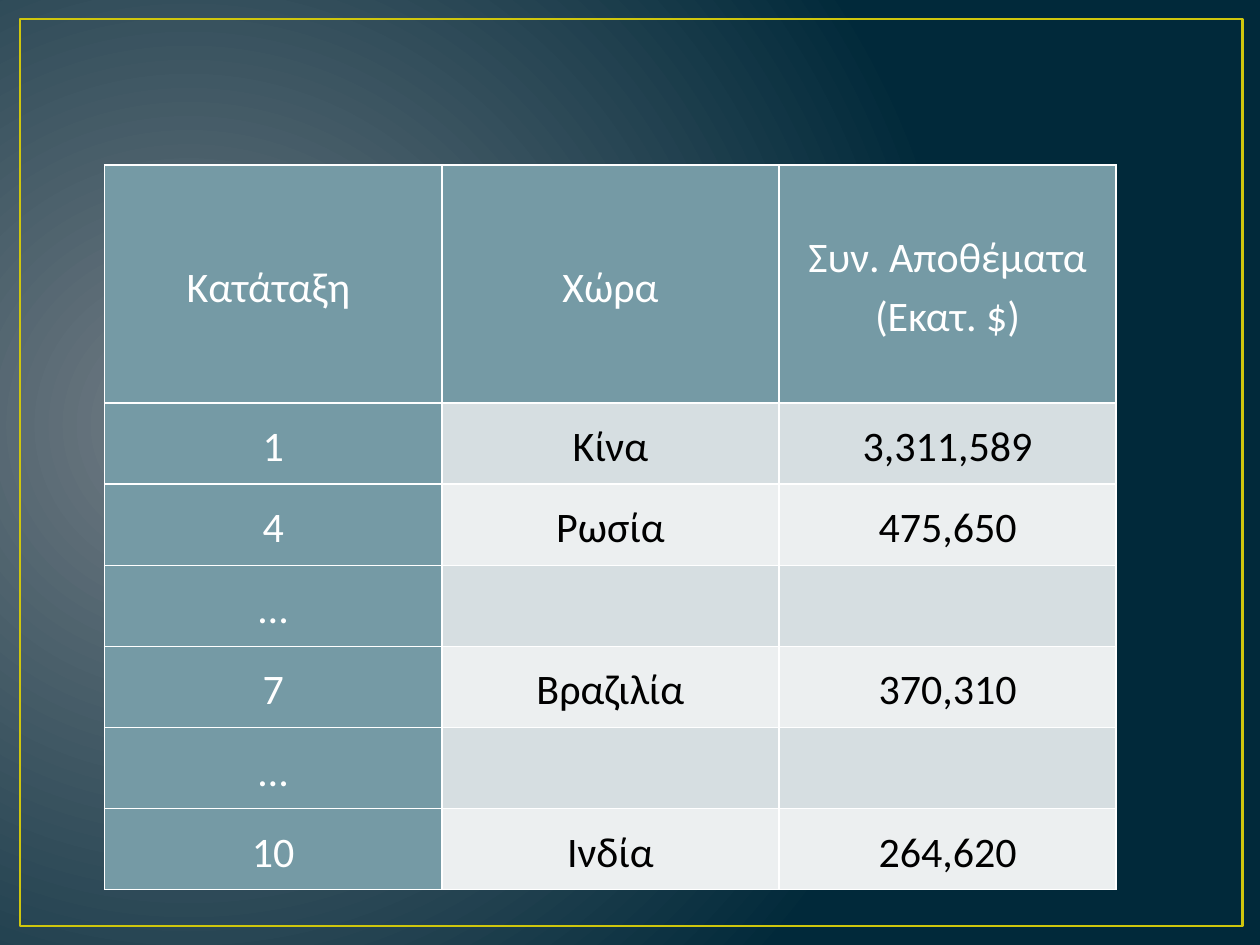
"""Build a slide with a table of countries ranked by total reserves."""
from dataclasses import dataclass
from typing import NamedTuple

from lxml import etree
from pptx import Presentation
from pptx import util as u
from pptx.dml.color import RGBColor
from pptx.enum import shapes, text
from pptx.oxml import ns


@dataclass(frozen=True)
class Theme:
    """Colours, font and sizes of the slide."""
    glow: str = "717C84"
    night: str = "01293A"
    frame: str = "CFC60D"
    accent: str = "759AA5"
    bands: tuple[str, str] = ("D6DEE1", "ECEFF0")
    light: str = "FFFFFF"
    dark: str = "000000"
    font: str = "Calibri"
    size: float = 24
    frame_width: float = 1.5
    border_width: float = 1


class Area(NamedTuple):
    """A rectangle in inches."""
    left: float
    top: float
    width: float
    height: float

    def lengths(self) -> list[int]:
        """Return the four lengths as slide units."""
        return [u.Inches(value) for value in self]


class Rank(NamedTuple):
    """One table row."""
    place: str
    country: str = ""
    reserves: str = ""


THEME = Theme()
WIDTH, HEIGHT = 10, 7.5
FRAME = Area(0.16, 0.15, 9.7, 7.2)
GRID = Area(0.83, 1.31, 8.03, 5.75)
HEADER_HEIGHT = 1.89
CELL_MARGIN = 0.01
RANKS = [
    Rank("Κατάταξη ", "Χώρα", "Συν. Αποθέματα\n(Εκατ. $)"),
    Rank("1", "Κίνα", "3,311,589"),
    Rank("4", "Ρωσία", "475,650"),
    Rank("…"),
    Rank("7", "Βραζιλία", "370,310"),
    Rank("…"),
    Rank("10", "Ινδία", "264,620"),
]


def paint_background(page) -> None:
    """Fill the page with a radial glow from the left."""
    fill = page.background.fill
    fill.gradient()
    for stop, color in zip(fill.gradient_stops, (THEME.glow, THEME.night)):
        stop.color.rgb = RGBColor.from_string(color)
    gradient = page.element.find(".//" + ns.qn("a:gradFill"))
    gradient.remove(gradient.find(ns.qn("a:lin")))
    circle = etree.SubElement(gradient, ns.qn("a:path"), path="circle")
    etree.SubElement(circle, ns.qn("a:fillToRect"),
                     l="15000", t="50000", r="85000", b="60000")


def add_frame(page, area: Area) -> None:
    """Draw the outline around the page."""
    box = page.shapes.add_shape(shapes.MSO_SHAPE.RECTANGLE, *area.lengths())
    box.shadow.inherit = False
    box.fill.background()
    box.line.color.rgb = RGBColor.from_string(THEME.frame)
    box.line.width = u.Pt(THEME.frame_width)


def write(para, words: str, *, color: str, size: float = THEME.size,
          font: str = THEME.font, spacing: float = 1.15) -> None:
    """Write centred words with line breaks into a paragraph."""
    para.alignment = text.PP_ALIGN.CENTER
    para.line_spacing = spacing
    for index, line in enumerate(words.split("\n")):
        if index:
            para.add_line_break()
        span = para.add_run()
        span.text = line
        span.font.name = font
        span.font.size = u.Pt(size)
        span.font.color.rgb = RGBColor.from_string(color)


def set_borders(cell, color: str, width: float) -> None:
    """Draw all four sides of a cell."""
    properties = cell._tc.get_or_add_tcPr()
    for index, side in enumerate(("lnL", "lnR", "lnT", "lnB")):
        line = etree.Element(ns.qn(f"a:{side}"), w=str(u.Pt(width)))
        solid = etree.SubElement(line, ns.qn("a:solidFill"))
        etree.SubElement(solid, ns.qn("a:srgbClr"), val=color)
        properties.insert(index, line)


def style_cell(cell, words: str, *, fill: str, color: str) -> None:
    """Fill, border and write one cell."""
    cell.fill.solid()
    cell.fill.fore_color.rgb = RGBColor.from_string(fill)
    set_borders(cell, THEME.light, THEME.border_width)
    cell.vertical_anchor = text.MSO_ANCHOR.MIDDLE
    cell.margin_left = cell.margin_right = u.Inches(CELL_MARGIN)
    cell.margin_top = cell.margin_bottom = u.Inches(CELL_MARGIN)
    if words:
        write(cell.text_frame.paragraphs[0], words, color=color)


def add_ranking(page, area: Area, ranks: list[Rank]) -> None:
    """Add the table with an accented header row and first column."""
    columns = len(Rank._fields)
    table = page.shapes.add_table(len(ranks), columns, *area.lengths()).table
    table.first_row = table.horz_banding = False
    for column in table.columns:
        column.width = u.Inches(area.width / columns)
    body_height = (area.height - HEADER_HEIGHT) / (len(ranks) - 1)
    for row, rank in enumerate(ranks):
        table.rows[row].height = u.Inches(body_height if row else HEADER_HEIGHT)
        for column, words in enumerate(rank):
            heading = row == 0 or column == 0
            style_cell(table.cell(row, column), words,
                       fill=THEME.accent if heading else THEME.bands[(row - 1) % 2],
                       color=THEME.light if heading else THEME.dark)


def main() -> None:
    """Build and save the deck."""
    deck = Presentation()
    deck.slide_width, deck.slide_height = u.Inches(WIDTH), u.Inches(HEIGHT)
    page = deck.slides.add_slide(deck.slide_layouts[6])
    paint_background(page)
    add_frame(page, FRAME)
    add_ranking(page, GRID, RANKS)
    deck.save("out.pptx")


if __name__ == "__main__":
    main()
